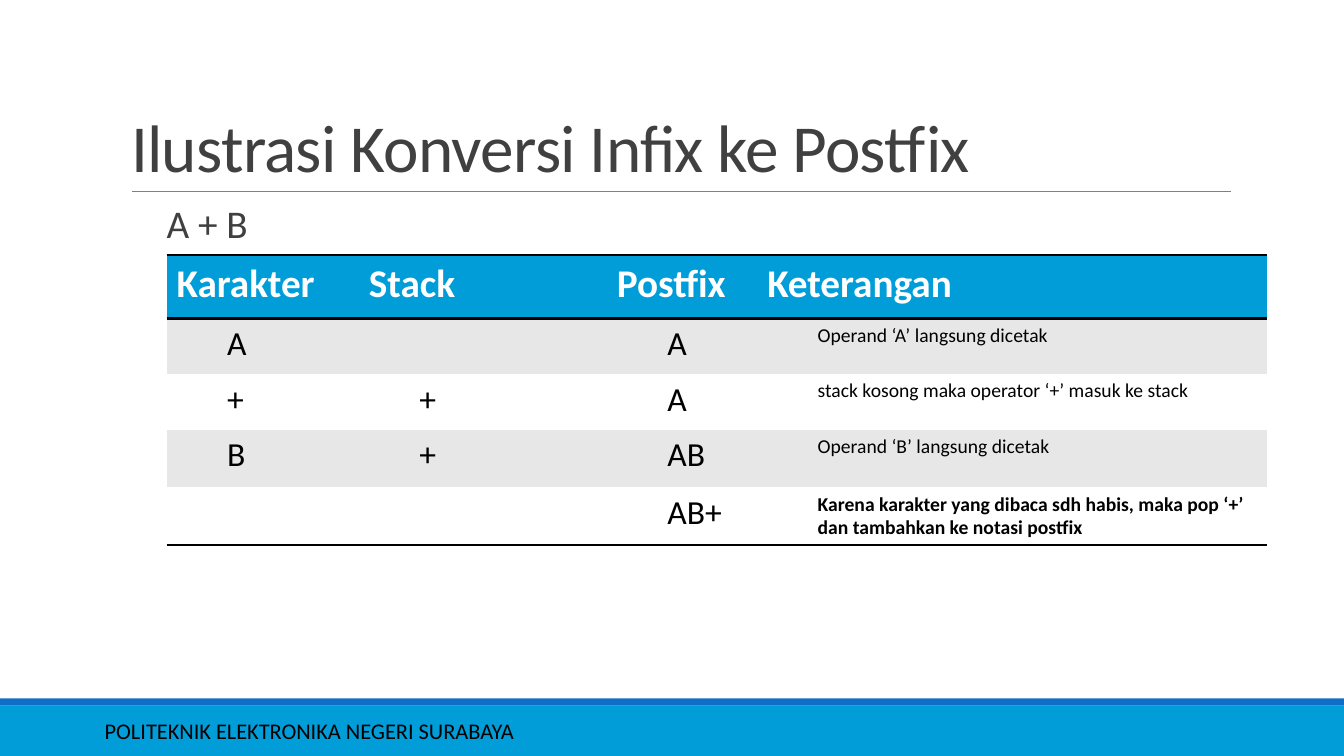
from dataclasses import dataclass

import pptx
import pptx.dml.color
import pptx.enum.shapes
import pptx.enum.text
import pptx.oxml
import pptx.oxml.ns
import pptx.util
from lxml import etree

Pt = pptx.util.Pt
qn = pptx.oxml.ns.qn
FONT = "Calibri"
BLUE, DARK_BLUE, BLACK, WHITE = "009DD9", "0F6FC6", "000000", "FFFFFF"
GREY_TEXT, GREY_BAND, GREY_LINE = "404040", "E7E7E7", "808080"
NO_TABLE_STYLE = "{2D5ABB26-0587-4C30-8999-92F81FD0307C}"


@dataclass
class Bar:
    top: float
    height: float
    color: str


@dataclass
class Step:
    height: float
    texts: tuple[str, str, str, str]
    fill: str
    note_bold: bool = False


BARS = [Bar(504, 36, BLUE), Bar(498.9, 5.1, DARK_BLUE)]
COLUMN_WIDTHS = [137.3, 177.2, 107.4, 364.4]
HEADER_HEIGHT = 45.2
HEADERS = ["Karakter", "Stack", "Postfix", "Keterangan"]
STEPS = [
    Step(39.8, ("A", "", "A", "Operand ‘A’ langsung dicetak"), GREY_BAND),
    Step(39.8, ("+", "+", "A", "stack kosong maka operator ‘+’ masuk ke stack"), WHITE),
    Step(41.2, ("B", "+", "AB", "Operand ‘B’ langsung dicetak"), GREY_BAND),
    Step(41.2, ("", "", "AB+", "Karena karakter yang dibaca sdh habis, maka pop ‘+’ "
                "dan tambahkan ke notasi postfix"), WHITE, True),
]


def rgb(color: str) -> pptx.dml.color.RGBColor:
    return pptx.dml.color.RGBColor.from_string(color)


def place(sp, left: float, top: float, width: float, height: float) -> None:
    sp.left, sp.top, sp.width, sp.height = Pt(left), Pt(top), Pt(width), Pt(height)


def add_run(p, text: str, size: float, color: str, bold: bool = False):
    r = p.add_run()
    r.text = text
    r.font.name, r.font.size, r.font.bold = FONT, Pt(size), bold
    r.font.color.rgb = rgb(color)
    return r


def set_indent(p, left: float) -> None:
    pPr = p._p.get_or_add_pPr()
    pPr.set("marL", str(Pt(left)))
    pPr.set("indent", "0")


def add_border(cell, side: str) -> None:
    ln = etree.SubElement(cell._tc.get_or_add_tcPr(), qn(f"a:ln{side}"), w=str(Pt(2)))
    fill = etree.SubElement(ln, qn("a:solidFill"))
    etree.SubElement(fill, qn("a:srgbClr"), val=BLACK)


def fill_cell(cell, color: str, borders: str) -> None:
    for side in borders:
        add_border(cell, side)
    cell.fill.solid()
    cell.fill.fore_color.rgb = rgb(color)


def add_bar(s, bar: Bar) -> None:
    sp = s.shapes.add_shape(pptx.enum.shapes.MSO_SHAPE.RECTANGLE,
                            0, Pt(bar.top), Pt(960), Pt(bar.height))
    sp.shadow.inherit = False
    sp.fill.solid()
    sp.fill.fore_color.rgb = rgb(bar.color)
    sp.line.fill.background()


def add_steps_table(s) -> None:
    frame = s.shapes.add_table(len(STEPS) + 1, len(HEADERS), Pt(119), Pt(182.2),
                               Pt(sum(COLUMN_WIDTHS)), Pt(207.2))
    frame.element.xpath(".//a:tableStyleId")[0].text = NO_TABLE_STYLE
    table = frame.table
    table.horz_banding = False
    for column, width in zip(table.columns, COLUMN_WIDTHS):
        column.width = Pt(width)
    for row, height in zip(table.rows, [HEADER_HEIGHT] + [step.height for step in STEPS]):
        row.height = Pt(height)

    for col, header in enumerate(HEADERS):
        cell = table.cell(0, col)
        fill_cell(cell, BLUE, "TB")
        add_run(cell.text_frame.paragraphs[0], header, 28, WHITE, True)

    for row, step in enumerate(STEPS, start=1):
        for col, text in enumerate(step.texts):
            cell = table.cell(row, col)
            fill_cell(cell, step.fill, "B" if row == len(STEPS) else "")
            if text:
                is_note = col == len(HEADERS) - 1
                p = cell.text_frame.paragraphs[0]
                p.level = 1
                set_indent(p, 36)
                add_run(p, text, 14 if is_note else 24, BLACK, is_note and step.note_bold)


def main() -> None:
    prs = pptx.Presentation()
    prs.slide_width, prs.slide_height = Pt(960), Pt(540)
    s = prs.slides.add_slide(prs.slide_layouts[1])
    title, body = s.placeholders

    # Footer bars and title rule
    for bar in BARS:
        add_bar(s, bar)
    rule = s.shapes.add_connector(pptx.enum.shapes.MSO_CONNECTOR.STRAIGHT,
                                  Pt(94.3), Pt(136.8), Pt(879), Pt(136.8))
    rule.line.color.rgb = rgb(GREY_LINE)
    rule.line.width = Pt(0.5)
    etree.SubElement(rule.element.spPr, qn("a:effectLst"))

    # Footer text
    footer = s.shapes.add_textbox(Pt(67.7), Pt(507.6), Pt(605.5), Pt(28.8))
    tf = footer.text_frame
    tf.word_wrap = True
    tf.vertical_anchor = pptx.enum.text.MSO_ANCHOR.MIDDLE
    add_run(tf.paragraphs[0], "POLITEKNIK ELEKTRONIKA NEGERI SURABAYA", 16, BLACK)

    # Title
    place(title, 86.4, 22.3, 792, 114.5)
    tf = title.text_frame
    tf.vertical_anchor = pptx.enum.text.MSO_ANCHOR.BOTTOM
    p = tf.paragraphs[0]
    p.alignment = pptx.enum.text.PP_ALIGN.LEFT
    p.line_spacing = 0.85
    r = add_run(p, "Ilustrasi Konversi Infix ke Postfix", 48, GREY_TEXT)
    r.font._element.set("spc", "-50")

    # Expression
    place(body, 119, 145.4, 72.7, 36.7)
    tf = body.text_frame
    tf.margin_left = tf.margin_right = 0
    p = tf.paragraphs[0]
    set_indent(p, 0)
    etree.SubElement(p._p.get_or_add_pPr(), qn("a:buNone"))
    p.line_spacing = 0.8
    p.space_before, p.space_after = Pt(0), Pt(2)
    add_run(p, "A + B", 28, GREY_TEXT)

    # Conversion steps
    add_steps_table(s)
    prs.save("out.pptx")


if __name__ == "__main__":
    main()
